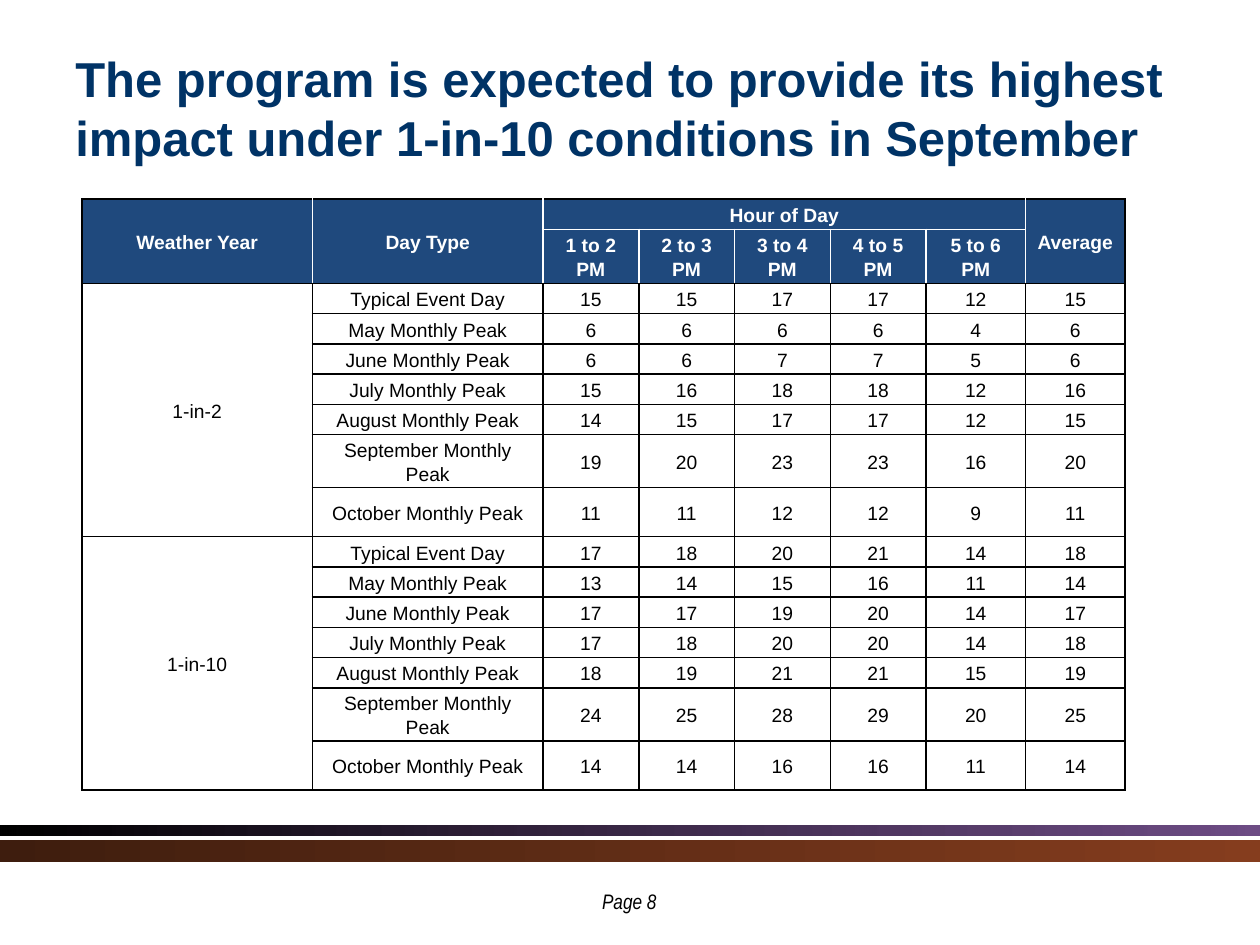
from pptx import Presentation
from pptx.util import Inches, Pt
from pptx.dml.color import RGBColor
from pptx.enum.shapes import MSO_SHAPE
from pptx.enum.text import MSO_ANCHOR, PP_ALIGN
from pptx.oxml.ns import qn
from lxml.etree import SubElement

THEME = {
    "navy": "003366", "header": "1F497D", "white": "FFFFFF", "black": "000000",
    "purple": "542D6F", "dark_brown": "3E1D0E", "brown": "853D1E",
    "title_size": 28, "page_size": 12, "cell_size": 11,
}


def write(tf, text, size, color, align, font="Arial", bold=False, italic=False):
    p = tf.paragraphs[0]
    p.alignment = align
    r = p.add_run()
    r.text = text
    formats = {"name": font, "size": Pt(size), "bold": bold, "italic": italic}
    for key, value in formats.items():
        setattr(r.font, key, value)
    r.font.color.rgb = RGBColor.from_string(THEME[color])
    return p


def add_borders(cell, colors):
    tc_pr = cell._tc.get_or_add_tcPr()
    for i, (side, color) in enumerate(colors.items()):
        ln = SubElement(tc_pr, qn(f"a:ln{side}"), w=str(Pt(1)))
        SubElement(SubElement(ln, qn("a:solidFill")), qn("a:srgbClr"), val=THEME[color])
        tc_pr.insert(i, ln)


prs = Presentation()
prs.slide_width, prs.slide_height = Inches(10), Inches(7.5)
s = prs.slides.add_slide(prs.slide_layouts[6])

bands = [
    (6.55, 0.08, "black", "purple", 85),
    (6.67, 0.17, "dark_brown", "brown", 100),
]
for top, height, start, end, opacity in bands:
    sp = s.shapes.add_shape(MSO_SHAPE.RECTANGLE, 0, Inches(top), prs.slide_width, Inches(height))
    sp.shadow.inherit = False
    sp.line.fill.background()
    sp.fill.gradient()
    sp.fill.gradient_angle = 0
    for stop, position, color in zip(sp.fill.gradient_stops, (0, 1), (start, end)):
        stop.position = position
        stop.color.rgb = RGBColor.from_string(THEME[color])
    if opacity < 100:
        end_color = list(sp._element.spPr.iter(qn("a:srgbClr")))[-1]
        SubElement(end_color, qn("a:alpha"), val=str(opacity * 1000))

title = "The program is expected to provide its highest impact under 1-in-10 conditions in September"
tf = s.shapes.add_textbox(Inches(0.5), Inches(0.3), Inches(9), Inches(1.1)).text_frame
tf.word_wrap = True
tf.vertical_anchor = MSO_ANCHOR.MIDDLE
write(tf, title, THEME["title_size"], "navy", PP_ALIGN.LEFT, bold=True)

tf = s.shapes.add_textbox(Inches(3.93), Inches(7), Inches(2.13), Inches(0.22)).text_frame
tf.word_wrap = True
write(tf, "Page 8", THEME["page_size"], "black", PP_ALIGN.CENTER, font="Arial Narrow", italic=True)

months = ["May", "June", "July", "August", "September", "October"]
day_types = ["Typical Event Day"] + [f"{month} Monthly Peak" for month in months]
impacts = {
    "1-in-2": [
        (15, 15, 17, 17, 12, 15),
        (6, 6, 6, 6, 4, 6),
        (6, 6, 7, 7, 5, 6),
        (15, 16, 18, 18, 12, 16),
        (14, 15, 17, 17, 12, 15),
        (19, 20, 23, 23, 16, 20),
        (11, 11, 12, 12, 9, 11),
    ],
    "1-in-10": [
        (17, 18, 20, 21, 14, 18),
        (13, 14, 15, 16, 11, 14),
        (17, 17, 19, 20, 14, 17),
        (17, 18, 20, 20, 14, 18),
        (18, 19, 21, 21, 15, 19),
        (24, 25, 28, 29, 20, 25),
        (14, 14, 16, 16, 11, 14),
    ],
}
rows = [
    ["Weather Year", "Day Type", "Hour of Day", "", "", "", "", "Average"],
    ["", ""] + [f"{hour} to {hour + 1} PM" for hour in range(1, 6)] + [""],
]
for year, values in impacts.items():
    for i, (day_type, numbers) in enumerate(zip(day_types, values)):
        rows.append([year if i == 0 else "", day_type, *map(str, numbers)])

widths = [1.83] * 2 + [0.76] * 4 + [0.79] * 2
heights = [0.24, 0.43] + ([0.24] * 5 + [0.39] * 2) * 2
table = s.shapes.add_table(
    len(rows), len(widths), Inches(0.65), Inches(1.58), Inches(sum(widths)), Inches(sum(heights))
).table
table.first_row = table.horz_banding = False
for column, width in zip(table.columns, widths):
    column.width = Inches(width)
for row, height in zip(table.rows, heights):
    row.height = Inches(height)

merges = [(0, 0, 1, 0), (0, 1, 1, 1), (0, 2, 0, 6), (0, 7, 1, 7), (2, 0, 8, 0), (9, 0, 15, 0)]
for top, left, bottom, right in merges:
    table.cell(top, left).merge(table.cell(bottom, right))

cell_format = {
    "vertical_anchor": MSO_ANCHOR.MIDDLE,
    "margin_left": Inches(0.07), "margin_right": Inches(0.07),
    "margin_top": 0, "margin_bottom": 0,
}
for i, row in enumerate(rows):
    is_header = i < 2
    for j, text in enumerate(row):
        cell = table.cell(i, j)
        for key, value in cell_format.items():
            setattr(cell, key, value)
        if is_header:
            cell.fill.solid()
            cell.fill.fore_color.rgb = RGBColor.from_string(THEME["header"])
        else:
            cell.fill.background()
        is_hour = 2 <= j <= 6
        white_sides = {
            "L": is_header and j > 0,
            "R": is_header and j < 7,
            "T": i == 1 and is_hour,
            "B": i == 0 and is_hour,
        }
        add_borders(cell, {side: "white" if on else "black" for side, on in white_sides.items()})
        if text:
            color = "white" if is_header else "black"
            p = write(cell.text_frame, text, THEME["cell_size"], color, PP_ALIGN.CENTER, bold=is_header)
            p.line_spacing = 1.15
            p.space_after = Pt(5 if is_header else 3)

prs.save("out.pptx")
